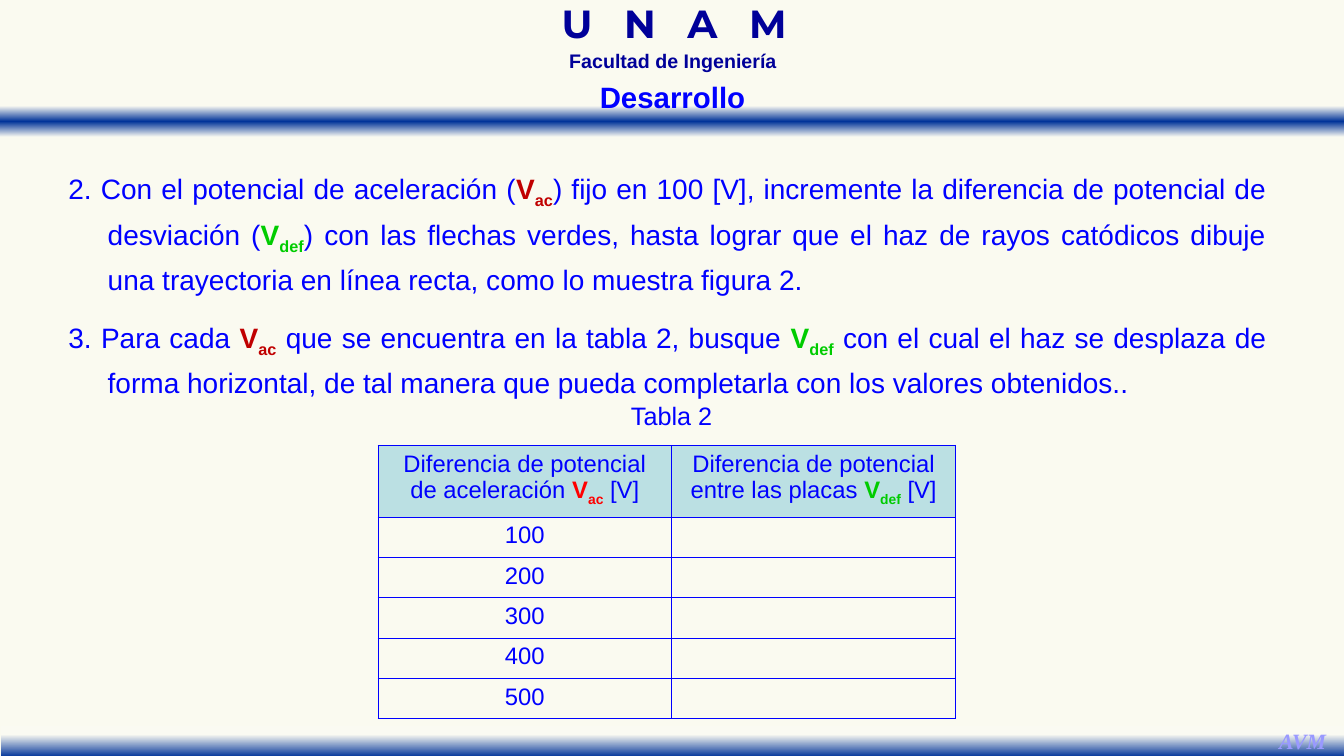
from dataclasses import dataclass
from typing import Optional

from lxml.etree import SubElement
from pptx import Presentation
from pptx.dml.color import RGBColor
from pptx.enum.shapes import MSO_SHAPE
from pptx.enum.text import MSO_AUTO_SIZE, PP_ALIGN
from pptx.oxml.ns import qn
from pptx.slide import Slide
from pptx.table import _Cell
from pptx.text.text import _Paragraph
from pptx.util import Emu, Pt

EMU_PER_PX = 9144
IVORY = RGBColor(0xFA, 0xFA, 0xF0)
BAND_LIGHT = RGBColor(0xFA, 0xFA, 0xF2)
BAND_BLUE = RGBColor(0x00, 0x33, 0x99)
NAVY = RGBColor(0x00, 0x00, 0x99)
BLUE = RGBColor(0x00, 0x00, 0xFF)
LILAC = RGBColor(0x99, 0x99, 0xFF)
DARK_RED = RGBColor(0xC0, 0x00, 0x00)
RED = RGBColor(0xFF, 0x00, 0x00)
GREEN = RGBColor(0x00, 0xCC, 0x00)
HEADER_TEAL = RGBColor(0xBB, 0xE0, 0xE3)


@dataclass(frozen=True)
class Box:
    left: int
    top: int
    width: int
    height: int

    def emu(self) -> tuple[Emu, Emu, Emu, Emu]:
        return px(self.left), px(self.top), px(self.width), px(self.height)


@dataclass(frozen=True)
class Run:
    text: str
    color: RGBColor = BLUE
    bold: bool = False
    italic: bool = False
    subscript: bool = False
    spacing: int = 0


@dataclass(frozen=True)
class Label:
    box: Box
    runs: list[Run]
    size: float
    font: str = "Arial"
    align: PP_ALIGN = PP_ALIGN.CENTER
    line_spacing: Optional[float] = None
    wrap: bool = False


@dataclass(frozen=True)
class Band:
    box: Box
    stops: list[tuple[int, RGBColor]]


def px(length: int) -> Emu:
    return Emu(length * EMU_PER_PX)


def voltage(subscript: str, color: RGBColor) -> list[Run]:
    return [Run("V", color, bold=True), Run(subscript, color, bold=True, subscript=True)]


BANDS = [
    Band(Box(-1, 105, 1335, 31), [(0, BAND_LIGHT), (50, BAND_BLUE), (100, BAND_LIGHT)]),
    Band(Box(1, 720, 1335, 31), [(28, BAND_LIGHT), (100, BAND_BLUE)]),
]
LABELS = [
    Label(Box(473, 7, 391, 45),
          [Run("U N A ", NAVY, bold=True, spacing=735), Run("M", NAVY, bold=True)],
          28, "Montserrat", line_spacing=0.7, wrap=True),
    Label(Box(489, 50, 357, 27), [Run("Facultad de Ingeniería", NAVY, bold=True)],
          14, line_spacing=0.7, wrap=True),
    Label(Box(1258, 717, 68, 37), [Run("AVM", LILAC, bold=True, italic=True)],
          15.6, "Times New Roman"),
    Label(Box(616, 392, 102, 40), [Run("Tabla 2")], 18, align=PP_ALIGN.LEFT),
    Label(Box(584, 74, 166, 45), [Run("Desarrollo", bold=True)], 21),
]
STEPS_BOX = Box(58, 158, 1208, 229)
STEPS = [
    [Run("2. Con el potencial de aceleración ("), *voltage("ac", DARK_RED),
     Run(") fijo en 100 [V], incremente la diferencia de potencial de desviación ("),
     *voltage("def", GREEN),
     Run(") con las flechas verdes, hasta lograr que el haz de rayos catódicos dibuje "
         "una trayectoria en línea recta, como lo muestra figura 2.")],
    [Run("3. Para cada "), *voltage("ac", DARK_RED),
     Run(" que se encuentra en la tabla 2, busque "), *voltage("def", GREEN),
     Run(" con el cual el haz se desplaza de forma horizontal, de tal manera que pueda "
         "completarla con los valores obtenidos..")],
]
TABLE_ORIGIN = (375, 442)
COLUMN_WIDTHS = [291, 282]
HEADER_HEIGHT = 71
ROW_HEIGHT = 40
HEADERS = [
    [Run("Diferencia de potencial de aceleración "), *voltage("ac", RED), Run(" [V]")],
    [Run("Diferencia de potencial entre las placas "), *voltage("def", GREEN), Run(" [V]")],
]
ACCELERATION_VOLTAGES = range(100, 501, 100)


def add_runs(paragraph: _Paragraph, runs: list[Run], size: float, font: str = "Arial") -> None:
    for item in runs:
        run = paragraph.add_run()
        run.text = item.text
        run.font.name = font
        run.font.size = Pt(size)
        run.font.bold = item.bold
        run.font.italic = item.italic
        run.font.color.rgb = item.color
        properties = run._r.get_or_add_rPr()
        if item.subscript:
            properties.set("baseline", "-25000")
        if item.spacing:
            properties.set("spc", str(item.spacing))


def add_band(slide: Slide, band: Band) -> None:
    shape = slide.shapes.add_shape(MSO_SHAPE.RECTANGLE, *band.box.emu())
    shape.shadow.inherit = False
    shape.line.fill.background()
    shape.fill.gradient()
    shape.fill.gradient_angle = 270
    stop_list = shape._element.spPr.find(".//" + qn("a:gsLst"))
    stop_list.clear()
    for position, color in band.stops:
        stop = SubElement(stop_list, qn("a:gs"), pos=str(position * 1000))
        SubElement(stop, qn("a:srgbClr"), val=str(color))


def add_label(slide: Slide, label: Label) -> None:
    frame = slide.shapes.add_textbox(*label.box.emu()).text_frame
    frame.word_wrap = label.wrap
    frame.auto_size = MSO_AUTO_SIZE.SHAPE_TO_FIT_TEXT
    paragraph = frame.paragraphs[0]
    paragraph.alignment = label.align
    paragraph.line_spacing = label.line_spacing
    add_runs(paragraph, label.runs, label.size, label.font)


def add_steps(slide: Slide) -> None:
    frame = slide.shapes.add_textbox(*STEPS_BOX.emu()).text_frame
    frame.word_wrap = True
    frame.auto_size = MSO_AUTO_SIZE.SHAPE_TO_FIT_TEXT
    for index, runs in enumerate(STEPS):
        paragraph = frame.add_paragraph() if index else frame.paragraphs[0]
        paragraph.alignment = PP_ALIGN.JUSTIFY
        paragraph.line_spacing = 1.2
        paragraph.space_after = Pt(12)
        properties = paragraph._p.get_or_add_pPr()
        properties.set("marL", str(px(39)))
        properties.set("indent", str(px(-39)))
        add_runs(paragraph, runs, 20)


def add_borders(cell: _Cell) -> None:
    properties = cell._tc.get_or_add_tcPr()
    for side in ("lnL", "lnR", "lnT", "lnB"):
        line = SubElement(properties, qn(f"a:{side}"), w=str(Pt(1)))
        fill = SubElement(line, qn("a:solidFill"))
        SubElement(fill, qn("a:srgbClr"), val=str(BLUE))


def add_voltage_table(slide: Slide) -> None:
    rows = [HEADERS] + [[[Run(str(value))], []] for value in ACCELERATION_VOLTAGES]
    heights = [HEADER_HEIGHT] + [ROW_HEIGHT] * len(ACCELERATION_VOLTAGES)
    box = Box(*TABLE_ORIGIN, sum(COLUMN_WIDTHS), sum(heights))
    table = slide.shapes.add_table(len(rows), len(COLUMN_WIDTHS), *box.emu()).table
    table.first_row = False
    table.horz_banding = False
    for column, width in zip(table.columns, COLUMN_WIDTHS):
        column.width = px(width)
    for row_index, (row, height) in enumerate(zip(rows, heights)):
        table.rows[row_index].height = px(height)
        for column_index, runs in enumerate(row):
            cell = table.cell(row_index, column_index)
            add_borders(cell)
            if row_index == 0:
                cell.fill.solid()
                cell.fill.fore_color.rgb = HEADER_TEAL
            else:
                cell.fill.background()
            paragraph = cell.text_frame.paragraphs[0]
            paragraph.alignment = PP_ALIGN.CENTER
            add_runs(paragraph, runs, 17)


def main() -> None:
    presentation = Presentation()
    presentation.slide_width = px(1333)
    presentation.slide_height = px(750)
    slide = presentation.slides.add_slide(presentation.slide_layouts[6])
    slide.background.fill.solid()
    slide.background.fill.fore_color.rgb = IVORY
    for band in BANDS:
        add_band(slide, band)
    for label in LABELS:
        add_label(slide, label)
    add_steps(slide)
    add_voltage_table(slide)
    presentation.save("out.pptx")


if __name__ == "__main__":
    main()
